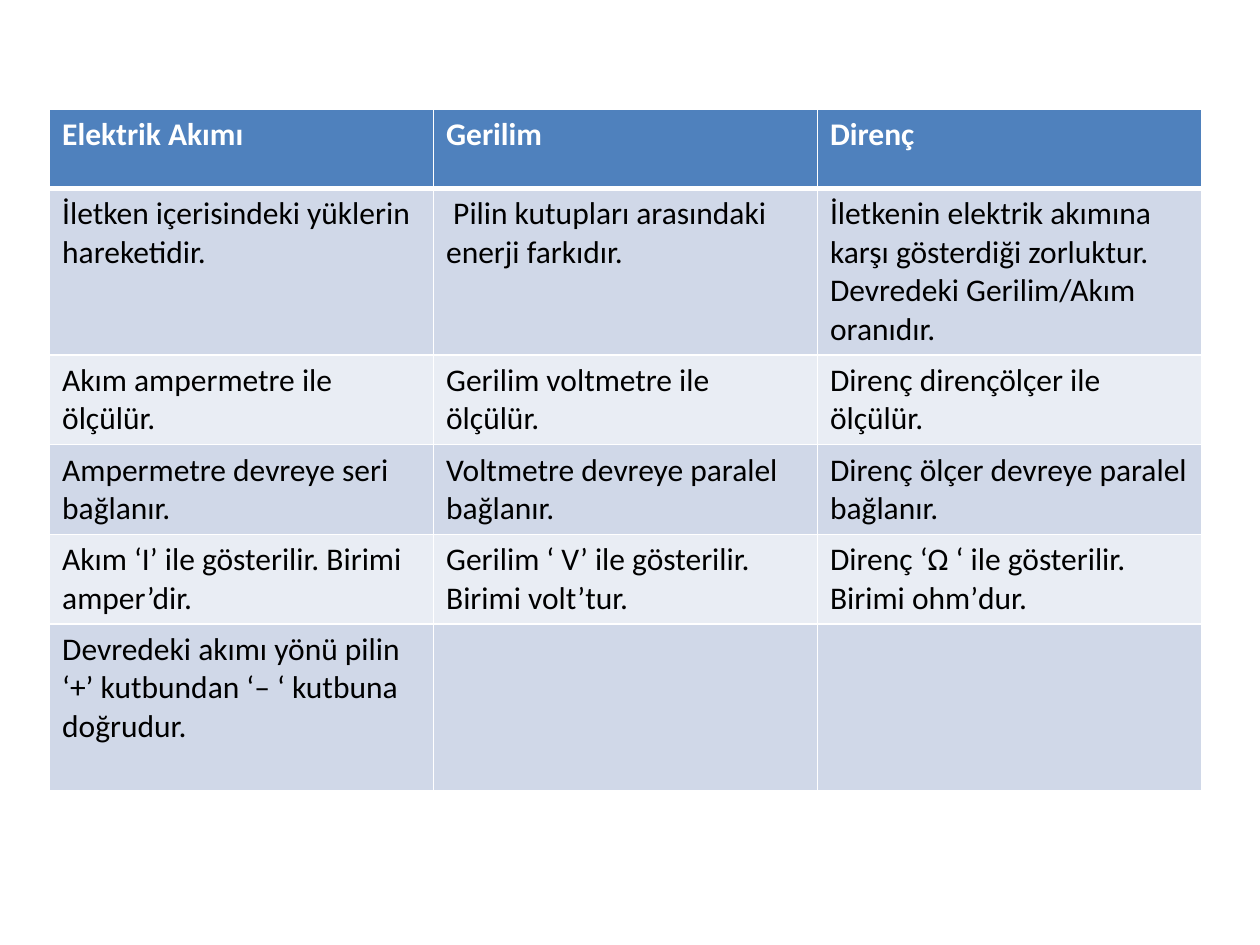
from lxml.etree import SubElement
from pptx import Presentation
from pptx.dml.color import RGBColor as RGB
from pptx.oxml.ns import qn
from pptx.util import Cm, Pt

COLORS = {
    "header": "4F81BD",
    "odd": "D0D8E8",
    "even": "E9EDF4",
    "border": "FFFFFF",
    "header_text": "FFFFFF",
    "body_text": "000000",
}
COMPARISON = [
    ("Elektrik Akımı", "Gerilim", "Direnç"),
    ("İletken içerisindeki yüklerin hareketidir.",
     " Pilin kutupları arasındaki enerji farkıdır.",
     "İletkenin elektrik akımına karşı gösterdiği zorluktur.\n"
     "Devredeki Gerilim/Akım oranıdır."),
    ("Akım ampermetre ile ölçülür.",
     "Gerilim voltmetre ile ölçülür.",
     "Direnç dirençölçer ile ölçülür."),
    ("Ampermetre devreye seri bağlanır.",
     "Voltmetre devreye paralel bağlanır.",
     "Direnç ölçer devreye paralel bağlanır."),
    ("Akım ‘I’ ile gösterilir. Birimi amper’dir.",
     "Gerilim ‘ V’ ile gösterilir. Birimi volt’tur.",
     "Direnç ‘Ω ‘ ile gösterilir. Birimi ohm’dur."),
    ("Devredeki akımı yönü pilin ‘+’ kutbundan ‘– ‘ kutbuna doğrudur.", "", ""),
]
ROW_HEIGHTS = [1.6, 3.36, 1.8, 1.8, 1.8, 3.36]
COLUMN_WIDTH = 7.74


def add_borders(cell, widths):
    """Draw solid cell borders; widths maps a side (L, R, T, B) to points."""
    properties = cell._tc.get_or_add_tcPr()
    for position, (side, width) in enumerate(widths.items()):
        line = SubElement(properties, qn(f"a:ln{side}"), w=str(Pt(width)))
        fill = SubElement(line, qn("a:solidFill"))
        SubElement(fill, qn("a:srgbClr"), val=COLORS["border"])
        properties.insert(position, line)


prs = Presentation()
prs.slide_width, prs.slide_height = Cm(25.4), Cm(19.05)
slide = prs.slides.add_slide(prs.slide_layouts[6])

comparison = slide.shapes.add_table(
    len(COMPARISON), 3, Cm(1), Cm(2.2), Cm(3 * COLUMN_WIDTH), Cm(sum(ROW_HEIGHTS))
).table
for column in comparison.columns:
    column.width = Cm(COLUMN_WIDTH)

for r, (texts, height) in enumerate(zip(COMPARISON, ROW_HEIGHTS)):
    comparison.rows[r].height = Cm(height)
    is_header = r == 0
    band = "header" if is_header else "odd" if r % 2 else "even"
    text_color = COLORS["header_text" if is_header else "body_text"]
    text_format = {"name": "Calibri", "size": Pt(18), "bold": is_header}
    for c, text in enumerate(texts):
        cell = comparison.cell(r, c)
        cell.fill.solid()
        cell.fill.fore_color.rgb = RGB.from_string(COLORS[band])
        add_borders(cell, {"L": 1, "R": 1, "T": 3 if r == 1 else 1,
                           "B": 3 if is_header else 1})
        cell.text = text
        for paragraph in cell.text_frame.paragraphs:
            for attribute, value in text_format.items():
                for run in paragraph.runs:
                    setattr(run.font, attribute, value)
            for run in paragraph.runs:
                run.font.color.rgb = RGB.from_string(text_color)

prs.save("out.pptx")
